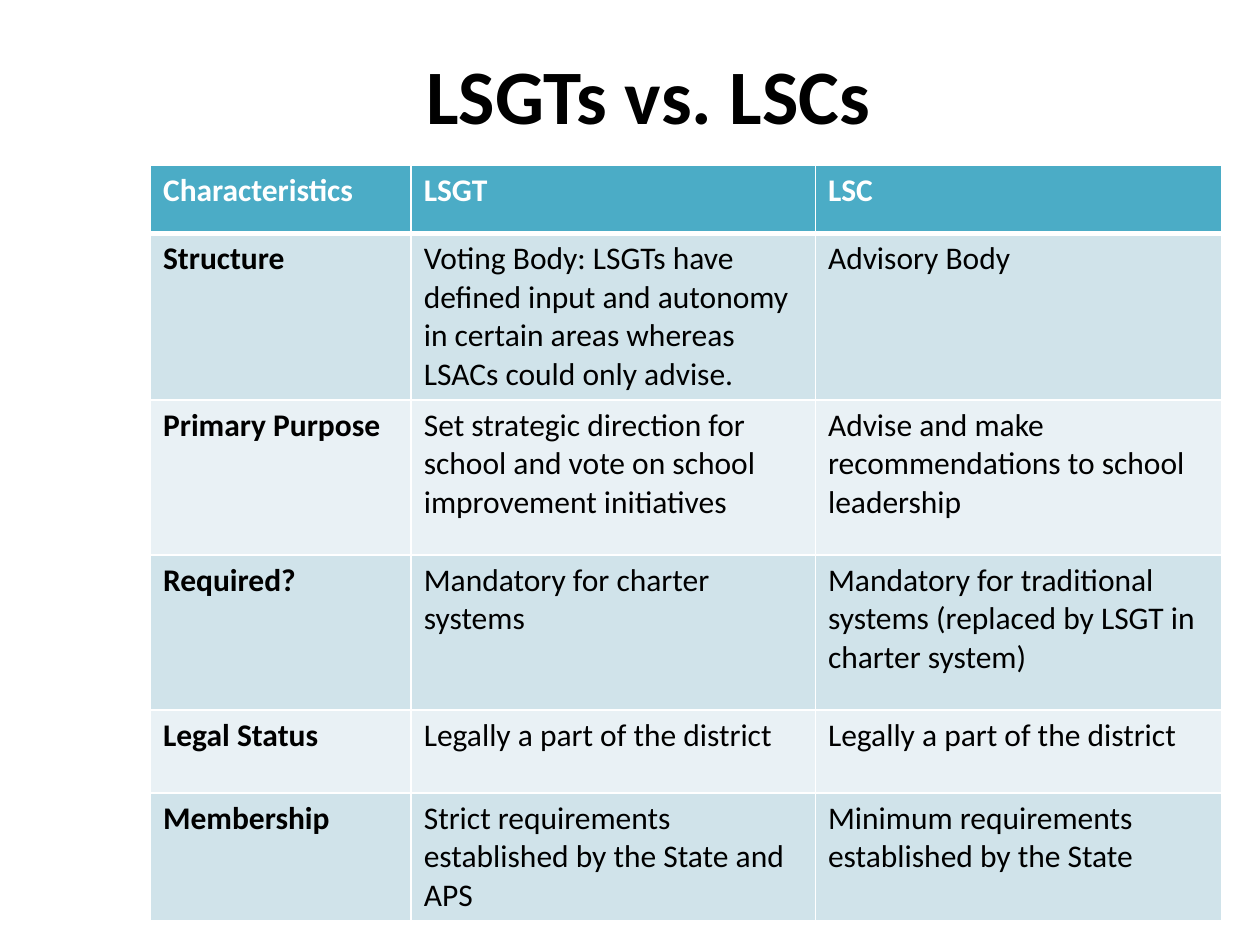
from dataclasses import dataclass

from lxml import etree
from pptx import Presentation
from pptx.dml.color import RGBColor
from pptx.enum.text import MSO_ANCHOR, PP_ALIGN
from pptx.oxml.ns import qn
from pptx.util import Pt

MIDDLE = MSO_ANCHOR.MIDDLE
CENTER = PP_ALIGN.CENTER


@dataclass(frozen=True)
class Theme:
    font: str = "Calibri"
    title: float = 44
    body: float = 18
    ink: str = "000000"
    white: str = "FFFFFF"
    head: str = "4BACC6"
    bands: tuple[str, str] = ("D0E3EA", "E9F1F5")
    thin: float = 1
    thick: float = 3


@dataclass(frozen=True)
class Row:
    height: float
    label: str
    lsgt: str
    lsc: str


THEME = Theme()
WIDTHS = (149, 231, 232)
ROWS = (
    Row(39, "Characteristics", "LSGT", "LSC"),
    Row(95, "Structure",
        "Voting Body: LSGTs have defined input and autonomy in certain areas "
        "whereas LSACs could only advise.",
        "Advisory Body"),
    Row(88.5, "Primary Purpose",
        "Set strategic direction for school and vote on school improvement "
        "initiatives",
        "Advise and make recommendations to school leadership"),
    Row(88.5, "Required?", "Mandatory for charter systems",
        "Mandatory for traditional systems (replaced by LSGT in charter system)"),
    Row(47.5, "Legal Status", "Legally a part of the district",
        "Legally a part of the district"),
    Row(73, "Membership",
        "Strict requirements established by the State and APS",
        "Minimum requirements established by the State"),
)


def style(para, size: float, color: str, bold: bool) -> None:
    for run in para.runs:
        font = run.font
        font.name = THEME.font
        font.size = Pt(size)
        font.bold = bold
        font.color.rgb = RGBColor.from_string(color)


def add_edges(cell, top: float, bottom: float) -> None:
    """Draw white cell borders; the schema wants them ahead of the fill."""
    props = cell._tc.get_or_add_tcPr()
    sides = {"L": THEME.thin, "R": THEME.thin, "T": top, "B": bottom}
    for spot, (side, width) in enumerate(sides.items()):
        line = etree.Element(qn(f"a:ln{side}"), w=str(Pt(width)))
        fill = etree.SubElement(line, qn("a:solidFill"))
        etree.SubElement(fill, qn("a:srgbClr"), val=THEME.white)
        props.insert(spot, line)


def fill_cell(cell, text: str, row: int, col: int) -> None:
    head = row == 0
    cell.text_frame.text = text
    style(cell.text_frame.paragraphs[0], THEME.body,
          THEME.white if head else THEME.ink, head or col == 0)
    color = THEME.head if head else THEME.bands[(row - 1) % 2]
    cell.fill.solid()
    cell.fill.fore_color.rgb = RGBColor.from_string(color)
    add_edges(cell, THEME.thick if row == 1 else THEME.thin,
              THEME.thick if head else THEME.thin)


def add_title(slide, text: str) -> None:
    title = slide.shapes.title
    title.left, title.top = Pt(57), Pt(21.6)
    title.width, title.height = Pt(627), Pt(64)
    frame = title.text_frame
    frame.text = text
    frame.vertical_anchor = MIDDLE
    para = frame.paragraphs[0]
    para.alignment = CENTER
    style(para, THEME.title, THEME.ink, True)


def add_grid(slide, rows: tuple[Row, ...]) -> None:
    high = sum(row.height for row in rows)
    grid = slide.shapes.add_table(len(rows), len(WIDTHS), Pt(86), Pt(94.5),
                                  Pt(sum(WIDTHS)), Pt(high)).table
    for col, width in enumerate(WIDTHS):
        grid.columns[col].width = Pt(width)
    for num, row in enumerate(rows):
        grid.rows[num].height = Pt(row.height)
        for col, text in enumerate((row.label, row.lsgt, row.lsc)):
            fill_cell(grid.cell(num, col), text, num, col)


def main() -> None:
    deck = Presentation()
    deck.slide_width, deck.slide_height = Pt(720), Pt(540)
    slide = deck.slides.add_slide(deck.slide_layouts[5])
    add_title(slide, "LSGTs vs. LSCs")
    add_grid(slide, ROWS)
    deck.save("out.pptx")


if __name__ == "__main__":
    main()
